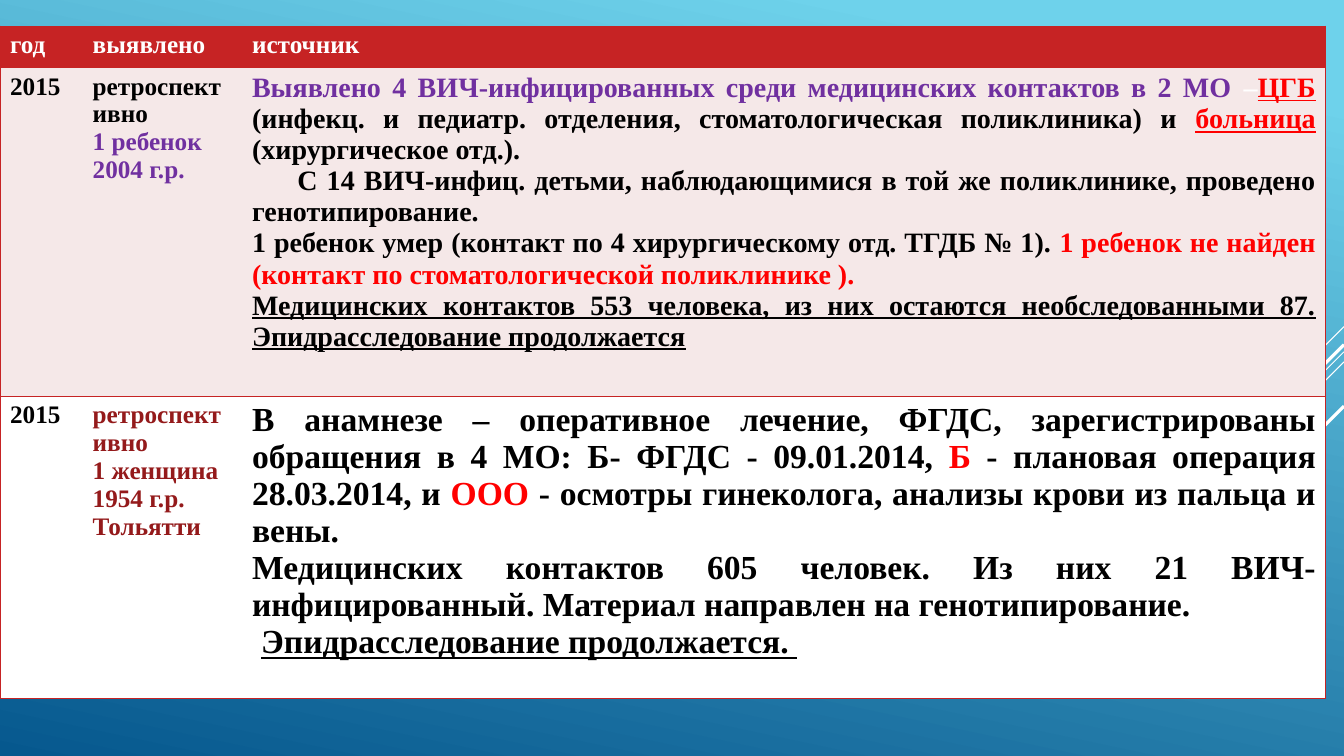
import pptx
import pptx.util
import pptx.dml.color
import pptx.enum.shapes
import pptx.enum.text
import pptx.oxml.ns
from lxml import etree

Inches = pptx.util.Inches
Pt = pptx.util.Pt
RGBColor = pptx.dml.color.RGBColor
PP_ALIGN = pptx.enum.text.PP_ALIGN
qn = pptx.oxml.ns.qn

FONT = "Times New Roman"
SKY = RGBColor(0x6E, 0xD2, 0xEB)
DEEP_BLUE = RGBColor(0x06, 0x58, 0x8E)
WHITE = RGBColor(0xFF, 0xFF, 0xFF)
BLACK = RGBColor(0, 0, 0)
CRIMSON = RGBColor(0xC6, 0x23, 0x24)
PINK = RGBColor(0xF5, 0xE8, 0xE8)
PURPLE = RGBColor(0x70, 0x30, 0xA0)
RED = RGBColor(0xFF, 0, 0)
DARK_RED = RGBColor(0x94, 0x1A, 0x1B)

# Diagonal lines: start height on the right edge, length along each axis, width
DIAGONALS = [(3.24, 1, 0.75), (3.49, 3.26, 0.75), (3.59, 2.07, 0.75),
             (3.42, 1.91, 2.25), (4.03, 1.39, 2.25)]

COLUMN_WIDTHS = [0.82, 1.58, 10.75]
ROW_HEIGHTS = [0.41, 3.26, 3]
ROW_FILLS = [CRIMSON, PINK, WHITE]

# A cell is (size, paragraphs); a paragraph is (first-line indent, runs);
# a run is (text, colour, underlined)
HEADER = [(18, [(0, [(title, WHITE, False)])])
          for title in ("год", "выявлено", "источник")]

FIRST_CASE = [
    (18, [(0, [("2015", BLACK, False)])]),
    (18, [(0, [("ретроспективно", BLACK, False)]),
          (0, [("1 ребенок", PURPLE, False)]),
          (0, [("2004 г.р.", PURPLE, False)])]),
    (20, [
        (0, [("Выявлено 4 ВИЧ-инфицированных среди медицинских контактов в 2 МО ",
              PURPLE, False),
             ("–", WHITE, False),
             ("ЦГБ ", RED, True),
             ("(инфекц. и педиатр. отделения, стоматологическая поликлиника) и ",
              BLACK, False),
             ("больница ", RED, True),
             ("(хирургическое отд.).", BLACK, False)]),
        (0.45, [("С 14 ВИЧ-инфиц. детьми, наблюдающимися в той же поликлинике, "
                 "проведено генотипирование. ", BLACK, False)]),
        (0, [("1 ребенок умер (контакт по 4 хирургическому отд. ТГДБ № 1). ",
              BLACK, False),
             ("1 ребенок не найден (контакт по стоматологической поликлинике ).",
              RED, False)]),
        (0, [("Медицинских контактов 553 человека, из них остаются "
              "необследованными 87. Эпидрасследование продолжается",
              BLACK, True)]),
    ]),
]

SECOND_CASE = [
    (18, [(0, [("2015", BLACK, False)])]),
    (18, [(0, [(line, DARK_RED, False)])
          for line in ("ретроспективно", "1 женщина", "1954 г.р.", "Тольятти")]),
    (24, [
        (0, [("В анамнезе – оперативное лечение, ФГДС, зарегистрированы "
              "обращения в 4 МО: Б- ФГДС - 09.01.2014, ", BLACK, False),
             ("Б", RED, False),
             (" - плановая операция 28.03.2014, и ", BLACK, False),
             ("ООО ", RED, False),
             ("- осмотры гинеколога, анализы крови из пальца и вены. ",
              BLACK, False)]),
        (0, [("Медицинских контактов 605 человек. Из них 21 ВИЧ-инфицированный. "
              "Материал направлен на генотипирование.", BLACK, False)]),
        (0.09, [("Эпидрасследование продолжается. ", BLACK, True)]),
    ]),
]


def paint_background(slide):
    fill = slide.background.fill
    fill.gradient()
    fill.gradient_angle = 258
    for stop, position, colour in zip(fill.gradient_stops, (0.1, 1), (SKY, DEEP_BLUE)):
        stop.position = position
        stop.color.rgb = colour


def draw_diagonals(slide, right):
    for top, length, width in DIAGONALS:
        line = slide.shapes.add_connector(
            pptx.enum.shapes.MSO_CONNECTOR.STRAIGHT,
            Inches(right), Inches(top), Inches(right - length), Inches(top + length))
        line.line.color.rgb = WHITE
        line.line.width = Pt(width)
        etree.SubElement(line._element.spPr, qn("a:effectLst"))


def set_borders(cell, visible_sides):
    properties = cell._tc.get_or_add_tcPr()
    for index, side in enumerate("LRTB"):
        border = etree.Element(qn("a:ln" + side), w=str(Pt(1)))
        if side in visible_sides:
            fill = etree.SubElement(border, qn("a:solidFill"))
            etree.SubElement(fill, qn("a:srgbClr"), val=str(CRIMSON))
        else:
            etree.SubElement(border, qn("a:noFill"))
        properties.insert(index, border)


def write_cell(cell, size, paragraphs, alignment):
    frame = cell.text_frame
    for index, (indent, runs) in enumerate(paragraphs):
        paragraph = frame.add_paragraph() if index else frame.paragraphs[0]
        paragraph.alignment = alignment
        if indent:
            paragraph._p.get_or_add_pPr().set("indent", str(Inches(indent)))
        for text, colour, underlined in runs:
            run = paragraph.add_run()
            run.text = text
            run.font.name = FONT
            run.font.size = Pt(size)
            run.font.bold = True
            run.font.underline = underlined
            run.font.color.rgb = colour


def build_case_table(slide, left, top):
    rows = [HEADER, FIRST_CASE, SECOND_CASE]
    table = slide.shapes.add_table(
        len(rows), len(COLUMN_WIDTHS), Inches(left), Inches(top),
        Inches(sum(COLUMN_WIDTHS)), Inches(sum(ROW_HEIGHTS))).table
    for column, width in zip(table.columns, COLUMN_WIDTHS):
        column.width = Inches(width)
    for row, height in zip(table.rows, ROW_HEIGHTS):
        row.height = Inches(height)

    sides = ["LTB", "TB", "RTB"]
    alignments = [PP_ALIGN.LEFT, PP_ALIGN.LEFT, PP_ALIGN.JUSTIFY]
    for row_index, contents in enumerate(rows):
        for column_index, (size, paragraphs) in enumerate(contents):
            cell = table.cell(row_index, column_index)
            cell.fill.solid()
            cell.fill.fore_color.rgb = ROW_FILLS[row_index]
            set_borders(cell, sides[column_index])
            write_cell(cell, size, paragraphs, alignments[column_index])


def main():
    presentation = pptx.Presentation()
    presentation.slide_width = Inches(13.33)
    presentation.slide_height = Inches(7.5)
    slide = presentation.slides.add_slide(presentation.slide_layouts[6])
    paint_background(slide)
    draw_diagonals(slide, 13.33)
    build_case_table(slide, 0, 0.26)
    presentation.save("out.pptx")


if __name__ == "__main__":
    main()
